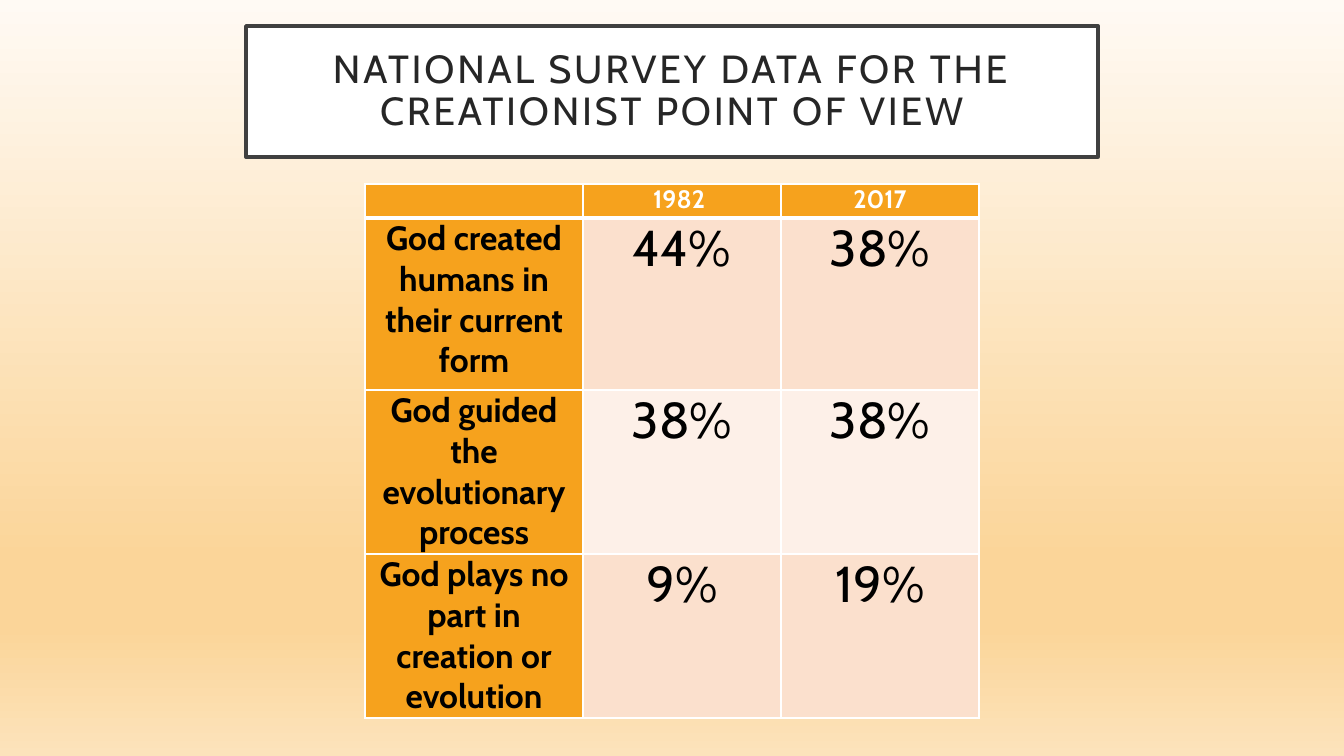
from dataclasses import dataclass

from pptx import Presentation
from pptx import util as u
from pptx.dml.color import RGBColor
from pptx.enum import text
from pptx.oxml import parse_xml
from pptx.oxml.ns import nsdecls, qn
from lxml import etree

SCALE = 12192000 / 1344  # EMU in one px


@dataclass(frozen=True)
class Theme:
    font: str = "Cabin"
    title_size: int = 28
    header_size: int = 18
    label_size: int = 24
    value_size: int = 36
    title_ink: str = "262626"
    frame: str = "404040"
    white: str = "FFFFFF"
    black: str = "000000"
    accent: str = "F6A21D"
    bands: tuple[str, str] = ("FBE0CD", "FDF0E8")
    # Gradient stops: percent and colour, from top to bottom
    sky: tuple[tuple[int, str], ...] = (
        (0, "FFFAF4"), (74, "FBD599"), (83, "FBD599"), (100, "FCE3BB"))


@dataclass(frozen=True)
class SurveyRow:
    label: str
    values: tuple[str, str]
    height: int


@dataclass(frozen=True)
class CellStyle:
    fill: str
    ink: str
    size: int
    bold: bool
    bottom: int = 1


THEME = Theme()
HEADER = SurveyRow("", ("1982 ", "2017"), 34)
ANSWERS = (
    SurveyRow("God created humans in their current form", ("44%", "38%"), 172),
    SurveyRow("God guided the evolutionary process", ("38%", "38%"), 164),
    SurveyRow("God plays no part in creation or evolution", ("9%", "19%"), 164),
)
COLUMNS = (218, 198, 198)


def px(length: int) -> u.Emu:
    return u.Emu(round(length * SCALE))


def rgb(colour: str) -> RGBColor:
    return RGBColor.from_string(colour)


def add_span(para, words: str, size: int, ink: str, bold: bool = False):
    span = para.add_run()
    span.text = words
    span.font.name = THEME.font
    span.font.size = u.Pt(size)
    span.font.bold = bold
    span.font.color.rgb = rgb(ink)
    return span


def paint_background(page) -> None:
    stops = "".join(
        f'<a:gs pos="{percent * 1000}"><a:srgbClr val="{colour}"/></a:gs>'
        for percent, colour in THEME.sky)
    page.element.cSld.insert(0, parse_xml(
        f'<p:bg {nsdecls("p", "a")}><p:bgPr><a:gradFill rotWithShape="1">'
        f'<a:gsLst>{stops}</a:gsLst><a:lin ang="5400000" scaled="0"/>'
        '</a:gradFill><a:effectLst/></p:bgPr></p:bg>'))


def add_title(page, words: str) -> None:
    box = page.shapes.title
    box.left, box.top, box.width, box.height = map(px, (246, 26, 852, 131))
    box.fill.solid()
    box.fill.fore_color.rgb = rgb(THEME.white)
    box.line.color.rgb = rgb(THEME.frame)
    box.line.width = u.Pt(2.5)
    frame = box.text_frame
    frame.word_wrap = True
    frame.auto_size = text.MSO_AUTO_SIZE.NONE
    frame.vertical_anchor = text.MSO_ANCHOR.MIDDLE
    frame.margin_left = frame.margin_right = px(20)
    frame.margin_top = frame.margin_bottom = px(20)
    para = frame.paragraphs[0]
    para.alignment = text.PP_ALIGN.CENTER
    para.line_spacing = 0.9
    span = add_span(para, words, THEME.title_size, THEME.title_ink)
    span.font._element.set("spc", "200")


def add_borders(cell, bottom: int) -> None:
    properties = cell._tc.get_or_add_tcPr()
    widths = {"lnL": 1, "lnR": 1, "lnT": 1, "lnB": bottom}
    for position, (side, points) in enumerate(widths.items()):
        line = etree.Element(qn(f"a:{side}"), w=str(u.Pt(points)))
        fill = etree.SubElement(line, qn("a:solidFill"))
        etree.SubElement(fill, qn("a:srgbClr"), val=THEME.white)
        properties.insert(position, line)


def fill_cell(cell, words: str, style: CellStyle) -> None:
    cell.margin_left = cell.margin_right = px(7)
    cell.margin_top = cell.margin_bottom = 0
    cell.fill.solid()
    cell.fill.fore_color.rgb = rgb(style.fill)
    add_borders(cell, style.bottom)
    para = cell.text_frame.paragraphs[0]
    para.alignment = text.PP_ALIGN.CENTER
    if words:
        add_span(para, words, style.size, style.ink, style.bold)


def add_survey(page) -> None:
    rows = (HEADER, *ANSWERS)
    table = page.shapes.add_table(
        len(rows), len(COLUMNS), px(365), px(184),
        px(sum(COLUMNS)), px(sum(row.height for row in rows))).table
    table.first_row = table.horz_banding = False
    for column, width in zip(table.columns, COLUMNS):
        column.width = px(width)

    header = CellStyle(THEME.accent, THEME.white, THEME.header_size, True, 3)
    label = CellStyle(THEME.accent, THEME.black, THEME.label_size, True)
    for number, row in enumerate(rows):
        table.rows[number].height = px(row.height)
        band = THEME.bands[(number - 1) % 2]
        value = CellStyle(band, THEME.black, THEME.value_size, False)
        styles = (label, value, value) if number else (header,) * 3
        for cell, words, style in zip(
                table.rows[number].cells, (row.label, *row.values), styles):
            fill_cell(cell, words, style)


def main() -> None:
    deck = Presentation()
    deck.slide_width, deck.slide_height = px(1344), px(756)
    page = deck.slides.add_slide(deck.slide_layouts[5])
    paint_background(page)
    add_title(page, "NATIONAL SURVEY DATA FOR THE CREATIONIST POINT OF VIEW")
    add_survey(page)
    deck.save("out.pptx")


if __name__ == "__main__":
    main()
